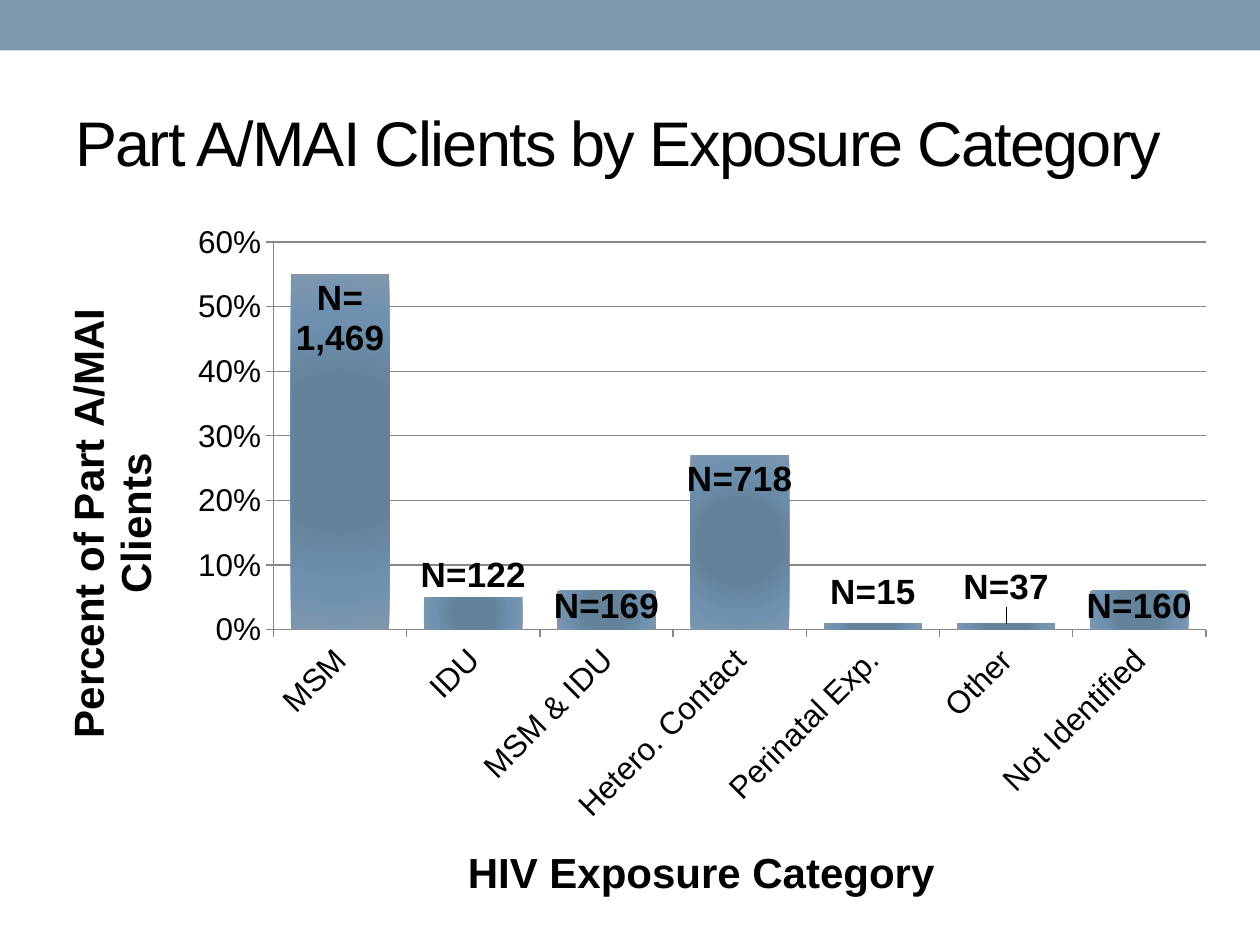
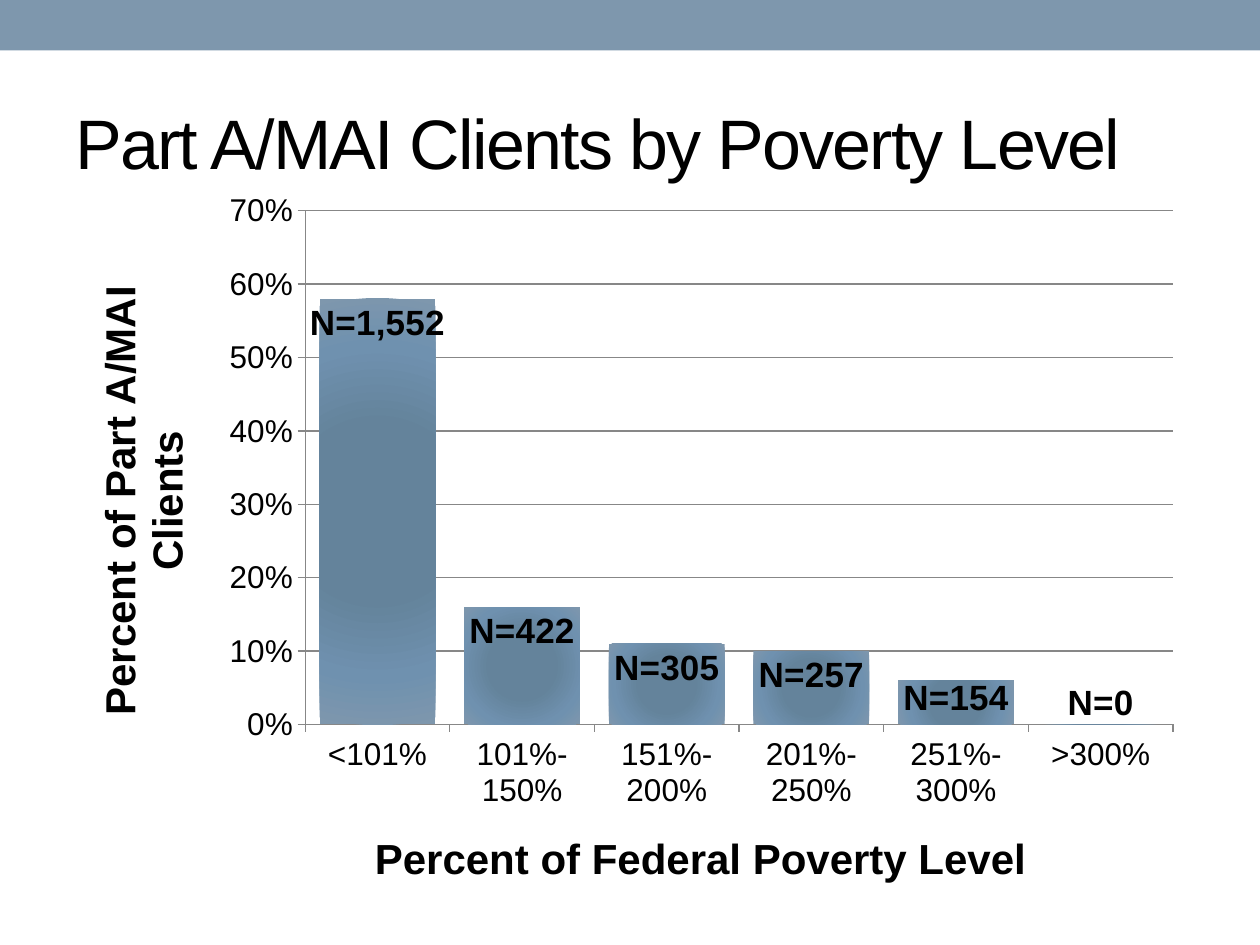
from lxml import etree
from pptx import Presentation
from pptx.chart.data import CategoryChartData
from pptx.dml.color import RGBColor
from pptx.enum.chart import XL_CHART_TYPE, XL_LABEL_POSITION, XL_TICK_MARK
from pptx.enum.shapes import MSO_SHAPE
from pptx.enum.text import MSO_ANCHOR
from pptx.oxml import parse_xml
from pptx.oxml.ns import qn
from pptx.util import Cm, Pt

FONT, BLACK, GRAY, BLUE = "Arial", "000000", "878787", "7E97AD"
NS_C = 'xmlns:c="http://schemas.openxmlformats.org/drawingml/2006/chart"'
NS_A = 'xmlns:a="http://schemas.openxmlformats.org/drawingml/2006/main"'
STOPS = [(0, "64839B"), (40, "64839B"), (75, "6F91AF"), (100, BLUE)]
GRADIENT = (
    f"<a:gradFill {NS_A}><a:gsLst>"
    + "".join(f'<a:gs pos="{pos * 1000}"><a:srgbClr val="{c}"/></a:gs>' for pos, c in STOPS)
    + '</a:gsLst><a:path path="circle"><a:fillToRect l="50000" t="50000" r="50000" b="50000"/>'
    "</a:path></a:gradFill>"
)

SLIDES = [
    dict(
        title="Part A/MAI Clients by Exposure Category", size=36,
        box=(0.64, 4.24, 24.13, 14.53), plot=(20.2, 4.4, 77.9, 53.8),
        x_title="HIV Exposure Category", x_at=(35.8, 87), y_at=(1.8, 12.6),
        gap=35, top=0.6, turn=-45,
        bars=[("MSM", 0.55, "N=\n1,469"), ("IDU", 0.05, "N=122"),
              ("MSM & IDU", 0.06, "N=169"), ("Hetero. Contact", 0.27, "N=718"),
              ("Perinatal Exp.", 0.01, "N=15"), ("Other", 0.01, "N=37"),
              ("Not Identified", 0.06, "N=160")],
        raised={1: -6.4, 2: -1.2, 4: -7.6, 5: -8.3, 6: -1.2},
    ),
    dict(
        title="Part A/MAI Clients by Poverty Level", size=40,
        box=(1.3, 3.61, 22.78, 14.86), plot=(21.3, 4.3, 76.8, 69.7),
        x_title="Percent of Federal Poverty Level", x_at=(26.8, 87.4), y_at=(1.8, 13.5),
        gap=25, top=0.7, turn=0,
        bars=[("<101%", 0.58, "N=1,552"), ("101%-150%", 0.16, "N=422"),
              ("151%-200%", 0.11, "N=305"), ("201%-250%", 0.1, "N=257"),
              ("251%-300%", 0.06, "N=154"), (">300%", 0, "N=0")],
        raised={4: -0.9, 5: -6.2},
    ),
]


def rgb(value):
    return RGBColor.from_string(value)


def place(parent, index, percents, edge=True, inner=False):
    for old in parent.findall(qn("c:layout")):
        parent.remove(old)
    layout = etree.fromstring(f"<c:layout {NS_C}><c:manualLayout/></c:layout>")
    items = [("layoutTarget", "inner")] if inner else []
    if edge:
        items += [("xMode", "edge"), ("yMode", "edge")]
    items += [(tag, f"{v / 100:.3f}") for tag, v in zip("xywh", percents)]
    for tag, val in items:
        etree.SubElement(layout[0], qn(f"c:{tag}")).set("val", val)
    parent.insert(index, layout)


prs = Presentation()
prs.slide_width, prs.slide_height = Cm(25.4), Cm(19.05)

for d in SLIDES:
    s = prs.slides.add_slide(prs.slide_layouts[6])
    sp = s.shapes.add_shape(MSO_SHAPE.RECTANGLE, 0, 0, prs.slide_width, Cm(1.02))
    sp.shadow.inherit = False
    sp.fill.solid()
    sp.fill.fore_color.rgb = rgb(BLUE)
    sp.line.fill.background()

    tf = s.shapes.add_textbox(Cm(1.27), Cm(1.48), Cm(23.5), Cm(2.75)).text_frame
    tf.word_wrap = True
    tf.vertical_anchor = MSO_ANCHOR.MIDDLE
    r = tf.paragraphs[0].add_run()
    r.text = d["title"]
    r.font.name, r.font.size = FONT, Pt(d["size"])
    r.font.color.rgb = rgb(BLACK)
    r.font._element.set("spc", "-100")

    data = CategoryChartData(number_format="0.0%")
    data.categories = [name for name, share, label in d["bars"]]
    data.add_series("Series 1", [share for name, share, label in d["bars"]])
    box = [Cm(v) for v in d["box"]]
    chart = s.shapes.add_chart(XL_CHART_TYPE.COLUMN_STACKED, *box, data).chart
    chart.has_legend = chart.has_title = False
    chart.font.name, chart.font.size = FONT, Pt(18)
    chart.font.color.rgb = rgb(BLACK)
    place(chart._chartSpace.find(".//" + qn("c:plotArea")), 0, d["plot"], inner=True)

    x_axis, y_axis = chart.category_axis, chart.value_axis
    y_axis.minimum_scale, y_axis.maximum_scale, y_axis.major_unit = 0, d["top"], 0.1
    y_axis.has_major_gridlines = True
    y_axis.major_gridlines.format.line.color.rgb = rgb(GRAY)
    y_axis.tick_labels.number_format = "0%"
    y_axis.tick_labels.number_format_is_linked = False
    x_axis.tick_labels.font.size = Pt(18)
    body = x_axis._element.find(qn("c:txPr")).find(qn("a:bodyPr"))
    body.set("rot", str(d["turn"] * 60000))
    body.set("vert", "horz")

    for axis, text, at, turn in [(x_axis, d["x_title"], d["x_at"], 0),
                                 (y_axis, "Percent of Part A/MAI Clients", d["y_at"], -90)]:
        axis.major_tick_mark = XL_TICK_MARK.OUTSIDE
        axis.minor_tick_mark = XL_TICK_MARK.NONE
        axis.format.line.color.rgb = rgb(GRAY)
        tf = axis.axis_title.text_frame
        r = tf.paragraphs[0].add_run()
        r.text = text
        r.font.name, r.font.size, r.font.bold = FONT, Pt(24), True
        r.font.color.rgb = rgb(BLACK)
        body = tf._txBody.find(qn("a:bodyPr"))
        body.set("rot", str(turn * 60000))
        body.set("vert", "horz")
        place(axis.axis_title._element, 1, at)

    plot = chart.plots[0]
    plot.gap_width, plot.overlap, plot.vary_by_categories = d["gap"], 100, False
    series = plot.series[0]
    series.invert_if_negative = False
    series.format.fill.solid()
    sp_pr = series._element.find(qn("c:spPr"))
    sp_pr.replace(sp_pr.find(qn("a:solidFill")), parse_xml(GRADIENT))
    series.format.line.fill.background()

    for i, (name, share, label) in enumerate(d["bars"]):
        data_label = series.points[i].data_label
        tf = data_label.text_frame
        for n, line in enumerate(label.split("\n")):
            p = tf.add_paragraph() if n else tf.paragraphs[0]
            r = p.add_run()
            r.text = line
            r.font.name, r.font.size, r.font.bold = FONT, Pt(20), True
            r.font.color.rgb = rgb(BLACK)
        data_label.position = XL_LABEL_POSITION.INSIDE_END
        if i in d["raised"]:
            place(series._element.findall(".//" + qn("c:dLbl"))[i], 1,
                  (0, d["raised"][i]), edge=False)

prs.save("out.pptx")
